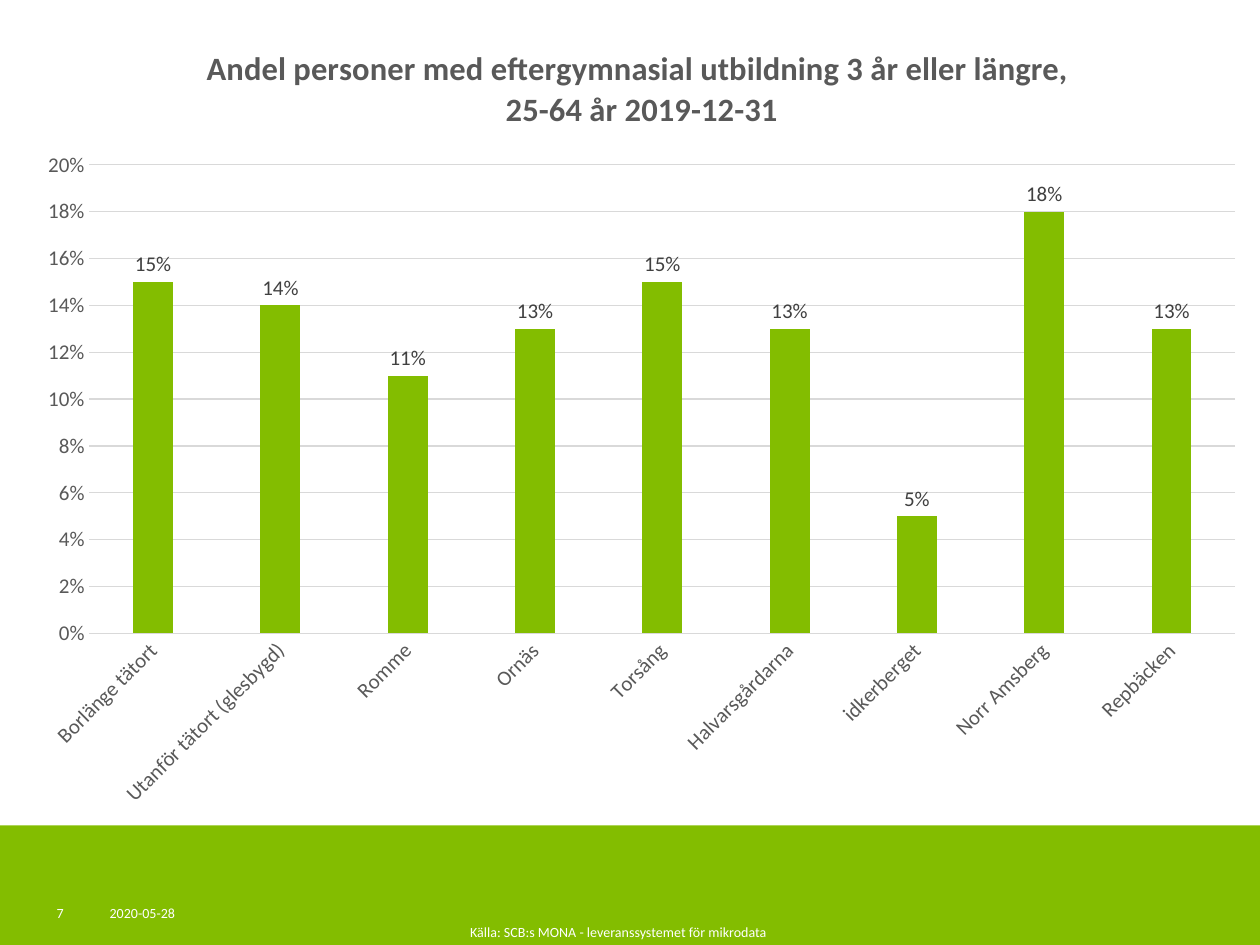
"""Build a slide with a column chart of education levels above a green footer."""
from dataclasses import dataclass

from pptx import Presentation
from pptx.chart.data import CategoryChartData
from pptx.dml.color import RGBColor
from pptx.enum.chart import XL_CHART_TYPE as CHART, XL_LABEL_POSITION as LABEL, XL_TICK_MARK as TICK
from pptx.enum.shapes import MSO_SHAPE as SHAPE
from pptx.enum.text import MSO_ANCHOR as ANCHOR, PP_ALIGN as ALIGN
from pptx.oxml import parse_xml
from pptx.oxml.ns import nsdecls, qn
from pptx.util import Inches, Pt

GREEN = RGBColor(0x83, 0xBD, 0x00)
WHITE = RGBColor(0xFF, 0xFF, 0xFF)
GRID = RGBColor(0xD9, 0xD9, 0xD9)
GREY = RGBColor(0x59, 0x59, 0x59)
DARK = RGBColor(0x40, 0x40, 0x40)
FONT = "Calibri"
TITLE = ("Andel personer med eftergymnasial utbildning 3 år eller längre, ", "25-64 år 2019-12-31")
SHARES = {
    "Borlänge tätort": 0.15,
    "Utanför tätort (glesbygd)": 0.14,
    "Romme": 0.11,
    "Ornäs": 0.13,
    "Torsång": 0.15,
    "Halvarsgårdarna": 0.13,
    "idkerberget": 0.05,
    "Norr Amsberg": 0.18,
    "Repbäcken": 0.13,
}
PLOT_LAYOUT = {"x": 0.053, "y": 0.18, "w": 0.927, "h": 0.583}


@dataclass
class FooterText:
    text: str
    left: float
    top: float
    width: float
    height: float
    inset_x: float = 0
    inset_y: float = 0
    align: ALIGN = ALIGN.LEFT
    anchor: ANCHOR = ANCHOR.TOP


FOOTER = [
    FooterText("2020-05-28", 0.87, 7.18, 0.71, 0.32),
    FooterText("7", 0.45, 7.18, 0.31, 0.32),
    FooterText("Källa: SCB:s MONA - leveranssystemet för mikrodata", 2.27, 7.04, 5.28, 0.47,
               0.1, 0.05, ALIGN.CENTER, ANCHOR.BOTTOM),
]


def style_font(font, size: float, color: RGBColor, bold: bool = False) -> None:
    font.name, font.size, font.bold = FONT, Pt(size), bold
    font.color.rgb = color


def add_footer_text(s, item: FooterText) -> None:
    box = s.shapes.add_textbox(Inches(item.left), Inches(item.top),
                               Inches(item.width), Inches(item.height))
    tf = box.text_frame
    tf.word_wrap = True
    tf.margin_left = tf.margin_right = Inches(item.inset_x)
    tf.margin_top = tf.margin_bottom = Inches(item.inset_y)
    tf.vertical_anchor = item.anchor
    p = tf.paragraphs[0]
    p.alignment = item.align
    r = p.add_run()
    r.text = item.text
    style_font(r.font, 8, WHITE)


def add_band(s) -> None:
    sp = s.shapes.add_shape(SHAPE.RECTANGLE, 0, Inches(6.55), Inches(10), Inches(0.95))
    sp.shadow.inherit = False
    sp.fill.solid()
    sp.fill.fore_color.rgb = GREEN
    sp.line.fill.background()


def add_title(chart) -> None:
    tf = chart.chart_title.text_frame
    for i, line in enumerate(TITLE):
        p = tf.add_paragraph() if i else tf.paragraphs[0]
        r = p.add_run()
        r.text = line
        style_font(r.font, 18.6, GREY, bold=True)
    chart.chart_title.include_in_layout = False


def style_axes(chart) -> None:
    cat, val = chart.category_axis, chart.value_axis
    for axis in (cat, val):
        axis.major_tick_mark = axis.minor_tick_mark = TICK.NONE
        style_font(axis.tick_labels.font, 12, GREY)
    body = cat._element.find(qn("c:txPr")).find(qn("a:bodyPr"))
    body.set("rot", "-2700000")
    body.set("vert", "horz")
    val.minimum_scale, val.maximum_scale, val.major_unit = 0, 0.2, 0.02
    val.tick_labels.number_format = "0%"
    val.tick_labels.number_format_is_linked = False
    val.format.line.fill.background()
    for line in (cat.format.line, val.major_gridlines.format.line):
        line.color.rgb = GRID
        line.width = Pt(0.75)


def place_plot(chart) -> None:
    area = chart._chartSpace.chart.plotArea
    for old in area.findall(qn("c:layout")):
        area.remove(old)
    sizes = "".join(f'<c:{k} val="{v}"/>' for k, v in PLOT_LAYOUT.items())
    area.insert(0, parse_xml(
        f'<c:layout {nsdecls("c")}><c:manualLayout><c:layoutTarget val="inner"/>'
        f'<c:xMode val="edge"/><c:yMode val="edge"/>{sizes}</c:manualLayout></c:layout>'))


def add_share_chart(s) -> None:
    data = CategoryChartData(number_format="0%")
    data.categories = list(SHARES)
    data.add_series("Series 1", list(SHARES.values()))
    chart = s.shapes.add_chart(CHART.COLUMN_CLUSTERED, Inches(0.19), Inches(0.16),
                               Inches(9.81), Inches(6.38), data).chart
    chart.has_legend = False
    chart.font.name, chart.font.size = FONT, Pt(10)
    add_title(chart)
    style_axes(chart)
    place_plot(chart)
    plot = chart.plots[0]
    plot.gap_width, plot.overlap, plot.vary_by_categories = 219, -27, False
    fill = plot.series[0].format.fill
    fill.solid()
    fill.fore_color.rgb = GREEN
    labels = plot.series[0].data_labels
    labels.show_value = True
    labels.number_format, labels.number_format_is_linked = "0%", False
    labels.position = LABEL.OUTSIDE_END
    style_font(labels.font, 12, DARK)


def main() -> None:
    prs = Presentation()
    prs.slide_width, prs.slide_height = Inches(10), Inches(7.5)
    s = prs.slides.add_slide(prs.slide_layouts[6])
    add_band(s)
    add_share_chart(s)
    for item in FOOTER:
        add_footer_text(s, item)
    prs.save("out.pptx")


if __name__ == "__main__":
    main()
